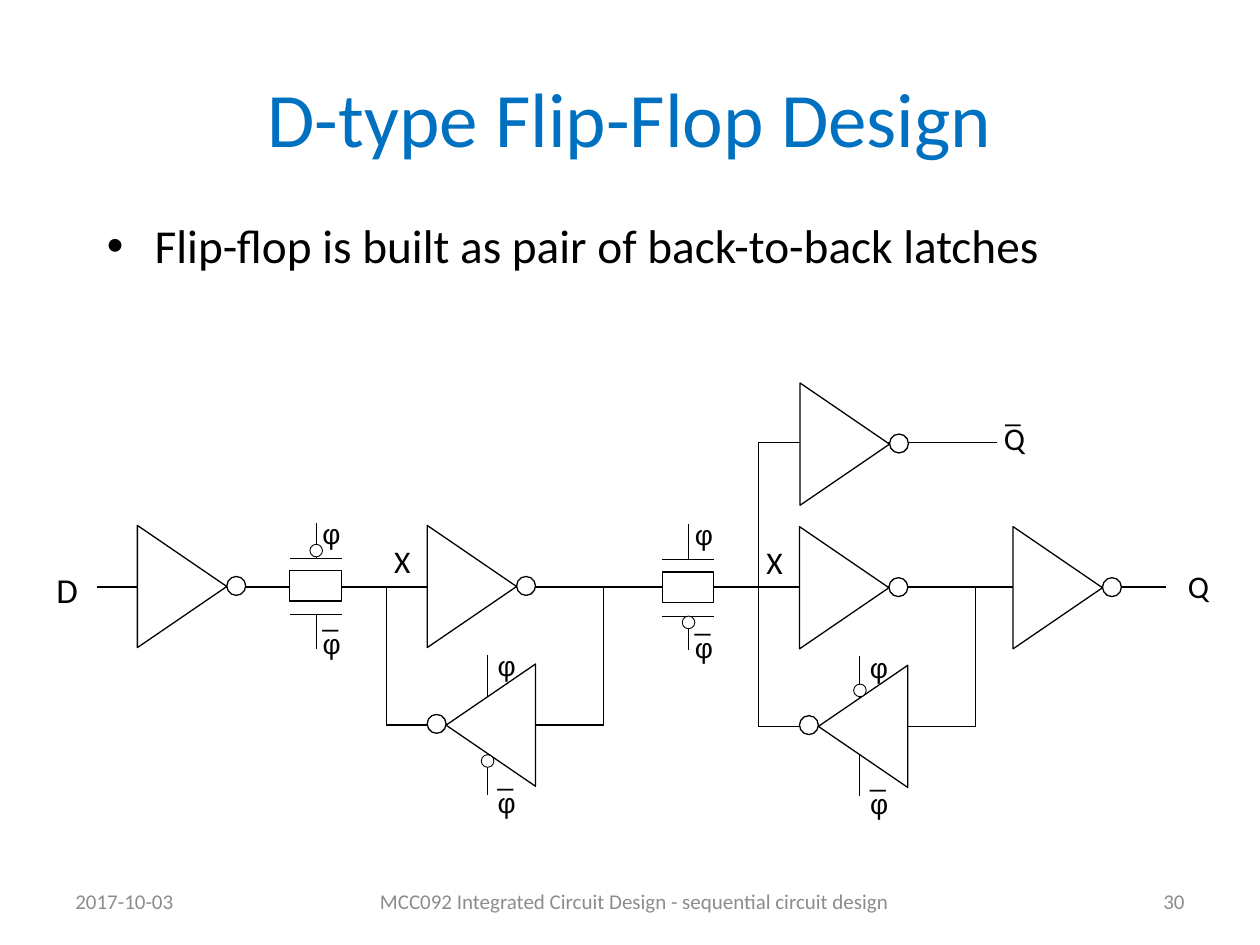
import pptx
import pptx.util
import pptx.dml.color
import pptx.enum.shapes
import pptx.enum.text
import pptx.oxml
import pptx.oxml.ns

Pt = pptx.util.Pt
RGBColor = pptx.dml.color.RGBColor
Kind = pptx.enum.shapes.MSO_SHAPE
Align = pptx.enum.text.PP_ALIGN
Anchor = pptx.enum.text.MSO_ANCHOR

BLACK = RGBColor(0, 0, 0)
WHITE = RGBColor(255, 255, 255)
BLUE = RGBColor(0, 0x70, 0xC0)
GRAY = RGBColor(0x8C, 0x8C, 0x8C)
THIN, THICK = 0.5, 0.75

prs = pptx.Presentation()
prs.slide_width = pptx.util.Inches(10)
prs.slide_height = pptx.util.Inches(7.5)
slide = prs.slides.add_slide(prs.slide_layouts[6])

# Grid of 100 columns by 75 rows
col = prs.slide_width / 100
row = prs.slide_height / 75


def place(x, y, w, h):
    return int(x * col), int(y * row), int(w * col), int(h * row)


def write(box, text, font, frame=(), para=(), leads=()):
    tf = slide.shapes.add_textbox(*place(*box)).text_frame
    for key, val in {"word_wrap": True, **dict(frame)}.items():
        setattr(tf, key, val)
    for n, part in enumerate(text.split("\n")):
        p = tf.add_paragraph() if n else tf.paragraphs[0]
        p.text = part
        for key, val in dict(para).items():
            setattr(p, key, val)
        if leads:
            p.line_spacing = Pt(leads[n])
        for run in p.runs:
            for key, val in {"name": "Calibri", **font}.items():
                if key == "color":
                    run.font.color.rgb = val
                else:
                    setattr(run.font, key, val)
    return tf


# Title, bullet and footer
mid = {"vertical_anchor": Anchor.MIDDLE}
write((5, 3, 90, 12.5), "D-type Flip-Flop Design", {"size": Pt(44), "color": BLUE},
      mid, {"alignment": Align.CENTER})
body = write((7.5, 16.7, 85, 5.8), "Flip-flop is built as pair of back-to-back latches",
             {"size": Pt(27), "color": BLACK}, para={"space_before": Pt(5.4)})
props = body.paragraphs[0]._p.get_or_add_pPr()
props.set("marL", str(int(3.8 * col)))
props.set("indent", str(int(-3.8 * col)))
for tag, key, val in [("buFont", "typeface", "Arial"), ("buChar", "char", "•")]:
    mark = pptx.oxml.parse_xml(f'<a:{tag} {pptx.oxml.ns.nsdecls("a")}/>')
    mark.set(key, val)
    props.append(mark)
for x, w, text, side in [
        (5, 23.3, "2017-10-03", Align.LEFT),
        (28.7, 43.3, "MCC092 Integrated Circuit Design - sequential circuit design", Align.CENTER),
        (71.7, 23.3, "30", Align.RIGHT)]:
    write((x, 69.5, w, 4), text, {"size": Pt(12), "color": GRAY}, mid, {"alignment": side})

# Parts outside the latches: main line, inverted output, three inverters
wires = [(7.7, 46.6, 92.5, 46.6, THICK), (60.2, 35.1, 79.1, 35.1, THICK)]
gates = [(9.6, 43), (62.2, 31.7), (79.1, 43.1)]
backs, boxes, dots, phis, bars, nodes = [], [], [], [], [], []

# Two latches: left edge, drop, top of loop, clock bubble rows, lower label row
for x, dy, top, gate, loop, low in [
        (23, 0, 46.6, 43.2, 59.9, 47.7),
        (52.55, 0.1, 35.2, 48.9, 54.3, 48)]:
    for x1, y1, x2, y2, wt in [
            (0, 48.8, 4.15, 48.8, THIN), (0, 44.3, 4.15, 44.3, THIN),
            (2.1, 41.5, 2.1, 44.3, THIN), (2.1, 48.8, 2.1, 51.5, THIN),
            (24.9, 46.6, 24.9, 57.6, THIN), (7.65, 57.55, 24.9, 57.55, THICK),
            (7.65, top - dy, 7.65, 57.55, THIN), (15.7, 52, 15.7, 63.1, THIN)]:
        wires.append((x + x1, y1 + dy, x + x2, y2 + dy, wt))
    gates.append((x + 9.6, 43 + dy))
    backs.append((x + 11.1, 54 + dy))
    boxes.append((x, 45.3 + dy))
    dots += [(x + 1.6, gate), (x + 15.2, loop)]
    phis += [(x + 2.6, 41 + dy), (x + 16.5, 51.5 + dy)]
    bars += [(x + 2.6, low), (x + 16.5, 60.3 + dy)]
    nodes.append((x + 7.3, 42.5 + dy))

# Wires
for x1, y1, x2, y2, wt in wires:
    wire = slide.shapes.add_connector(pptx.enum.shapes.MSO_CONNECTOR.STRAIGHT,
                                      *place(x1, y1, x2, y2))
    wire.line.color.rgb = BLACK
    wire.line.width = Pt(wt)
    wire._element.spPr.append(
        pptx.oxml.parse_xml(f'<a:effectLst {pptx.oxml.ns.nsdecls("a")}/>'))

# Inverters, clocked inverters, pass gates and bubbles
parts = [(Kind.ISOSCELES_TRIANGLE, gates, 9.7, 7.1, 90, THICK),
         (Kind.ISOSCELES_TRIANGLE, backs, 9.7, 7.1, 270, THICK),
         (Kind.OVAL, [(x + 8.4, y + 2.75) for x, y in gates], 1.5, 1.5, 0, THICK),
         (Kind.OVAL, [(x - 0.2, y + 2.7) for x, y in backs], 1.5, 1.5, 0, THICK),
         (Kind.RECTANGLE, boxes, 4.1, 2.4, 0, THICK),
         (Kind.OVAL, dots, 1, 1, 0, THIN)]
for kind, spots, w, h, turn, wt in parts:
    for x, y in spots:
        part = slide.shapes.add_shape(kind, *place(x, y, w, h))
        part.rotation = turn
        part.shadow.inherit = False
        part.fill.solid()
        part.fill.fore_color.rgb = WHITE
        part.line.color.rgb = BLACK
        part.line.width = Pt(wt)

# Clock labels
clock = {"name": "Arial", "size": Pt(16), "color": BLACK}
flush = dict.fromkeys(["margin_left", "margin_top", "margin_right", "margin_bottom"], 0)
for x, y in phis:
    write((x, y, 1, 2.4), "φ", clock, {**flush, "word_wrap": False})
for x, y in bars:
    write((x, y, 3.8, 4.8), "_\nφ", clock, flush, leads=(18, 16))

# Signal labels
sign = {"size": Pt(18), "color": BLACK}
for x, y in nodes:
    write((x, y, 3.4, 3.5), "X", sign)
write((3.5, 44.6, 3.4, 3.8), "D", {**sign, "size": Pt(20)})
for x, y, h, text in [(78.7, 31.3, 4.9, "_\vQ"), (93.3, 45.3, 3.4, "Q")]:
    write((x, y, 3.4, h), text, sign, para={"alignment": Align.CENTER}, leads=(16,))

prs.save("out.pptx")
